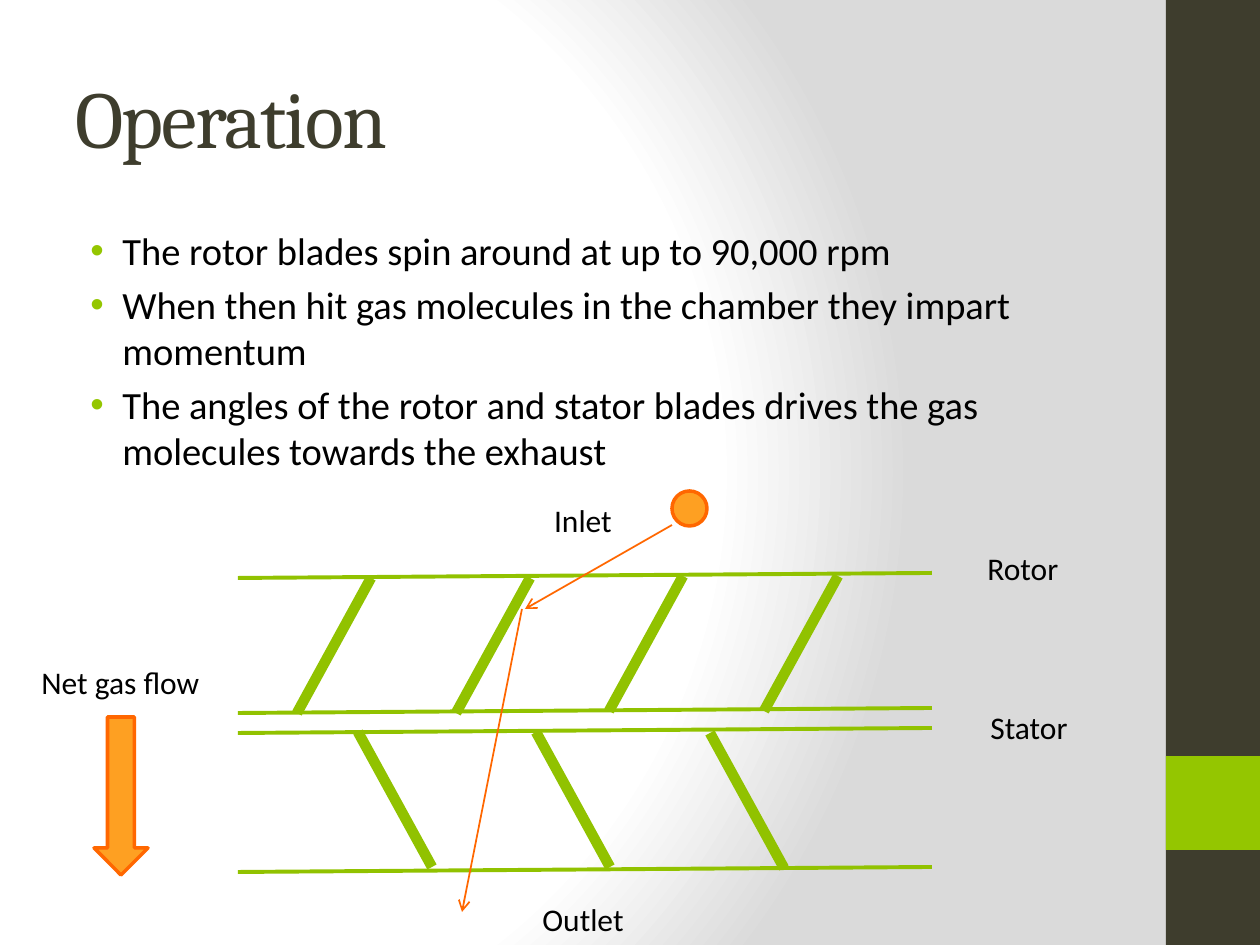
from typing import NamedTuple

from pptx import Presentation
from pptx.dml.color import RGBColor
from pptx.enum.shapes import MSO_CONNECTOR, MSO_SHAPE
from pptx.enum.text import MSO_ANCHOR, MSO_AUTO_SIZE, PP_ALIGN
from pptx.oxml import parse_xml
from pptx.oxml.ns import nsdecls, qn
from pptx.util import Emu, Pt

EMU_PER_PX = 914400 / 126
LINE = MSO_CONNECTOR.STRAIGHT
RECTANGLE, ELLIPSE = MSO_SHAPE.RECTANGLE, MSO_SHAPE.OVAL
DOWN_ARROW = MSO_SHAPE.DOWN_ARROW
MIDDLE, TOP = MSO_ANCHOR.MIDDLE, MSO_ANCHOR.TOP
LEFT, CENTER = PP_ALIGN.LEFT, PP_ALIGN.CENTER
GROW, FIXED = MSO_AUTO_SIZE.SHAPE_TO_FIT_TEXT, MSO_AUTO_SIZE.NONE

DARK, LIME, BLADE_GREEN = "3E3D2D", "94C600", "91C200"
ORANGE, ORANGE_EDGE, BLACK = "FEA022", "FF6700", "000000"


class Box(NamedTuple):
    left: int
    top: int
    width: int
    height: int


class Block(NamedTuple):
    kind: int
    box: Box
    fill: str
    edge: str | None = None


class Stroke(NamedTuple):
    start: tuple[int, int]
    end: tuple[int, int]
    color: str
    width: float
    arrow: bool = False


class Label(NamedTuple):
    text: str
    box: Box
    wrap: bool = False
    align: int = LEFT


BLOCKS = [
    Block(RECTANGLE, Box(1166, 0, 94, 945), DARK),
    Block(RECTANGLE, Box(1166, 756, 94, 94), LIME),
    Block(DOWN_ARROW, Box(94, 717, 54, 158), ORANGE, ORANGE_EDGE),
    Block(ELLIPSE, Box(672, 491, 35, 35), ORANGE, ORANGE_EDGE),
]
RAIL_LEFT, RAIL_RIGHT, RAIL_RISE = 238, 932, 5
RAIL_TOPS = [578, 713, 733, 872]
BLADE_RUN, BLADE_RISE = 74, 135
ROTOR_FEET = [(297, 713), (456, 713), (609, 711), (764, 711)]
STATOR_FEET = [(432, 867), (610, 867), (784, 868)]
MOLECULE_PATH = [
    Stroke((672, 525), (525, 609), ORANGE_EDGE, 1, True),
    Stroke((522, 609), (462, 912), ORANGE_EDGE, 1, True),
]
LABELS = [
    Label("Rotor", Box(975, 543, 97, 50)),
    Label("Stator", Box(978, 702, 103, 50)),
    Label("Net gas flow", Box(29, 657, 185, 50)),
    Label("Inlet", Box(0, 495, 1166, 50), True, CENTER),
    Label("Outlet", Box(0, 894, 1166, 50), True, CENTER),
]
BULLETS = [
    "The rotor blades spin around at up to 90,000 rpm",
    "When then hit gas molecules in the chamber they impart momentum",
    "The angles of the rotor and stator blades drives the gas molecules towards the exhaust",
]


def px(length: int) -> Emu:
    return Emu(round(length * EMU_PER_PX))


def rgb(color: str) -> RGBColor:
    return RGBColor.from_string(color)


def paint_background(slide) -> None:
    """Radial gradient from white to light grey."""
    slide.background.fill.gradient()
    gradient = slide.element.find(".//" + qn("a:gradFill"))
    stops = "".join(
        f'<a:gs pos="{position}"><a:srgbClr val="{color}"/></a:gs>'
        for position, color in [(0, "FFFFFF"), (75000, "FFFFFF"), (100000, "DADADA")]
    )
    gradient.getparent().replace(gradient, parse_xml(
        f'<a:gradFill {nsdecls("a")} rotWithShape="1"><a:gsLst>{stops}</a:gsLst>'
        '<a:path path="circle"><a:fillToRect l="20000" t="50000" r="100000" b="50000"/>'
        '</a:path></a:gradFill>'))


def add_block(slide, block: Block) -> None:
    shape = slide.shapes.add_shape(block.kind, *map(px, block.box))
    shape.shadow.inherit = False
    shape.fill.solid()
    shape.fill.fore_color.rgb = rgb(block.fill)
    if block.edge:
        shape.line.color.rgb = rgb(block.edge)
        shape.line.width = Pt(2)
    else:
        shape.line.fill.background()


def add_stroke(slide, stroke: Stroke) -> None:
    connector = slide.shapes.add_connector(LINE, *map(px, stroke.start + stroke.end))
    connector.line.color.rgb = rgb(stroke.color)
    connector.line.width = Pt(stroke.width)
    if stroke.arrow:
        line = connector.line._get_or_add_ln()
        line.append(parse_xml(f'<a:tailEnd {nsdecls("a")} type="arrow"/>'))
    connector._element.spPr.append(parse_xml(f'<a:effectLst {nsdecls("a")}/>'))


def add_text(slide, box: Box, lines: list[str], size: int, font: str = "Calibri",
             color: str = BLACK, align: int = LEFT, **frame_format) -> list:
    """Add a text box and return its paragraphs."""
    frame = slide.shapes.add_textbox(*map(px, box)).text_frame
    frame.text = "\n".join(lines)
    for name, value in frame_format.items():
        setattr(frame, name, value)
    run_format = {"name": font, "size": Pt(size)}
    for paragraph in frame.paragraphs:
        paragraph.alignment = align
        run_font = paragraph.runs[0].font
        for name, value in run_format.items():
            setattr(run_font, name, value)
        run_font.color.rgb = rgb(color)
    return list(frame.paragraphs)


def add_bullet(paragraph) -> None:
    paragraph.space_before = Pt(4.4)
    properties = paragraph._p.get_or_add_pPr()
    properties.set("marL", str(px(47)))
    properties.set("indent", str(-px(32)))
    for xml in (
        f'<a:buClr {nsdecls("a")}><a:srgbClr val="{LIME}"/></a:buClr>',
        f'<a:buFont {nsdecls("a")} typeface="Arial"/>',
        f'<a:buChar {nsdecls("a")} char="•"/>',
    ):
        properties.append(parse_xml(xml))


def turbine_strokes() -> list[Stroke]:
    rails = [Stroke((RAIL_LEFT, top), (RAIL_RIGHT, top - RAIL_RISE), BLADE_GREEN, 2.25)
             for top in RAIL_TOPS]
    blades = [Stroke((x, y), (x + run, y - BLADE_RISE), BLADE_GREEN, 6)
              for feet, run in [(ROTOR_FEET, BLADE_RUN), (STATOR_FEET, -BLADE_RUN)]
              for x, y in feet]
    return rails + blades


def main() -> None:
    presentation = Presentation()
    presentation.slide_width, presentation.slide_height = px(1260), px(945)
    slide = presentation.slides.add_slide(presentation.slide_layouts[6])
    paint_background(slide)
    for block in BLOCKS:
        add_block(slide, block)
    title, = add_text(slide, Box(63, 38, 1050, 157), ["Operation"], 46, "Cambria", DARK,
                      word_wrap=True, auto_size=FIXED, vertical_anchor=MIDDLE)
    title.runs[0].font._element.set("spc", "-100")
    for paragraph in add_text(slide, Box(63, 221, 1050, 661), BULLETS, 22,
                              word_wrap=True, auto_size=FIXED, vertical_anchor=TOP):
        add_bullet(paragraph)
    for stroke in turbine_strokes() + MOLECULE_PATH:
        add_stroke(slide, stroke)
    for label in LABELS:
        add_text(slide, label.box, [label.text], 18, align=label.align,
                 word_wrap=label.wrap, auto_size=GROW)
    presentation.save("out.pptx")


if __name__ == "__main__":
    main()
